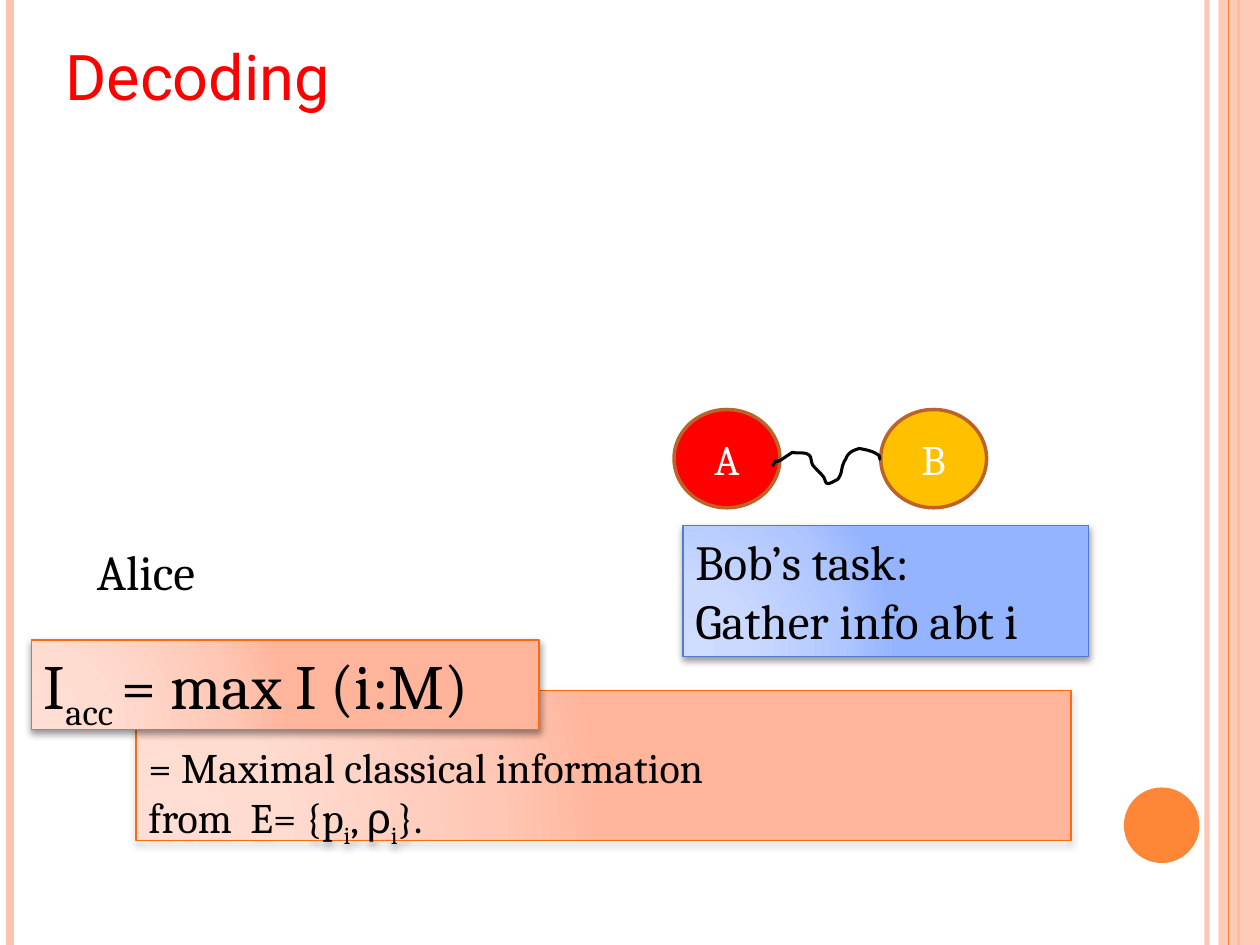
"""Build the Decoding slide: entangled pair A-B, Bob's task and accessible information."""
from pptx import Presentation
from pptx.dml.color import RGBColor
from pptx.enum.shapes import MSO_CONNECTOR, MSO_SHAPE
from pptx.enum.text import MSO_ANCHOR, PP_ALIGN
from pptx.oxml import parse_xml
from pptx.oxml.ns import nsdecls, qn
from pptx.util import Inches, Pt

STRAIGHT = MSO_CONNECTOR.STRAIGHT
RECTANGLE, OVAL = MSO_SHAPE.RECTANGLE, MSO_SHAPE.OVAL
TOP, MIDDLE = MSO_ANCHOR.TOP, MSO_ANCHOR.MIDDLE
LEFT, CENTER = PP_ALIGN.LEFT, PP_ALIGN.CENTER

THEME = {
    "serif": "Cambria", "sans": "Roboto", "greek": "Arial",
    "title": 36, "label": 28, "body": 24,
    "black": "000000", "white": "FFFFFF", "red": "FF0000", "gold": "FFC000",
    "peach": "FEC3AE", "orange": "FE8637", "rim": "BC6329",
    "blue_panel": (("CFDCFF", "CBD9FF", "AFC6FF", "95B4FF"), "4F7CCF"),
    "orange_panel": (("FFDED5", "FFDBD0", "FFC8B6", "FFB59B"), "FF6B0A"),
}
SLIDE_WIDTH, SLIDE_HEIGHT = 10, 7.5
GRADIENT_STOPS = (0, 30, 75, 100)
CURVE_STEPS = 8

RULES = [
    (9.58, "peach", 3, 93),
    (0.08, "peach", 4.5, 100),
    (9.83, "orange", 1.5, 100),
]
INNER_RULE = (9.75, "orange", 0.75, 100)
SIDE_BAND = (9.67, 0, 0.33, SLIDE_HEIGHT)
BADGE = (8.92, 6.25, 0.6, 0.6)

PARTICLES = [("A", 5.35, "red"), ("B", 6.99, "gold")]
PARTICLE_TOP, PARTICLE_WIDTH, PARTICLE_HEIGHT = 3.25, 0.84, 0.78

WAVE_START = (6.13, 3.7)
WAVE_CURVES = [
    ((6.18, 3.62), (6.13, 3.69), (6.2, 3.65)),
    ((6.23, 3.63), (6.29, 3.59), (6.29, 3.59)),
    ((6.32, 3.6), (6.36, 3.59), (6.4, 3.6)),
    ((6.45, 3.62), (6.43, 3.65), (6.45, 3.69)),
    ((6.48, 3.73), (6.51, 3.75), (6.54, 3.79)),
    ((6.56, 3.84), (6.55, 3.86), (6.64, 3.81)),
    ((6.65, 3.81), (6.66, 3.79), (6.67, 3.77)),
    ((6.68, 3.75), (6.68, 3.72), (6.69, 3.69)),
    ((6.7, 3.67), (6.7, 3.66), (6.71, 3.65)),
    ((6.72, 3.63), (6.72, 3.62), (6.74, 3.6)),
    ((6.76, 3.58), (6.79, 3.57), (6.82, 3.56)),
    ((6.87, 3.57), (6.94, 3.58), (6.98, 3.62)),
    ((6.98, 3.63), (6.98, 3.64), (6.99, 3.65)),
]

ALICE = [[("Alice", "")]]
TITLE = [[("Decoding", "")]]
TASK = [[("Bob’s task:", "")], [("Gather info abt i", "")]]
MEANING = [
    [("= Maximal classical information", "")],
    [("from  E= {p", ""), ("i", "sub"), (", ", ""), ("ρ", "greek"),
     ("i", "sub"), ("}.", "")],
]
FORMULA = [[("I", ""), ("acc ", "sub"), ("= max I (i:M)", "")]]


def color(name):
    return RGBColor.from_string(THEME.get(name, name))


def set_alpha(element, percent):
    if percent < 100:
        tone = next(element.iter(qn("a:srgbClr")))
        tone.append(parse_xml(f'<a:alpha {nsdecls("a")} val="{percent * 1000}"/>'))


def add_rule(slide, x, tone, width, alpha):
    rule = slide.shapes.add_connector(
        STRAIGHT, Inches(x), 0, Inches(x), Inches(SLIDE_HEIGHT))
    rule.line.color.rgb = color(tone)
    rule.line.width = Pt(width)
    properties = rule._element.spPr
    set_alpha(properties, alpha)
    properties.append(parse_xml(f'<a:effectLst {nsdecls("a")}/>'))


def add_solid(slide, kind, place, fill, rim=None, rim_width=0):
    shape = slide.shapes.add_shape(kind, *map(Inches, place))
    shape.shadow.inherit = False
    shape.fill.solid()
    shape.fill.fore_color.rgb = color(fill)
    if rim:
        shape.line.color.rgb = color(rim)
        shape.line.width = Pt(rim_width)
    else:
        shape.line.fill.background()
    return shape


def write(shape, lines, size, tone="black", face="serif", align=LEFT,
          anchor=TOP, wrap=True, spacing=None, top=0.05):
    frame = shape.text_frame
    frame.word_wrap = wrap
    frame.vertical_anchor = anchor
    frame.margin_top = Inches(top)
    for index, line in enumerate(lines):
        para = frame.add_paragraph() if index else frame.paragraphs[0]
        para.alignment = align
        if spacing:
            para.line_spacing = spacing
        para.font.name = THEME[face]
        para.font.size = Pt(THEME[size])
        para.font.color.rgb = color(tone)
        for text, style in line:
            span = para.add_run()
            span.text = text
            if style == "sub":
                span.font._element.set("baseline", "-25000")
            elif style == "greek":
                span.font.name = THEME["greek"]


def add_label(slide, place, lines, size, **style):
    box = slide.shapes.add_textbox(*map(Inches, place))
    write(box, lines, size, wrap=False, **style)


def add_panel(slide, place, palette, lines, size, **style):
    tones, rim = THEME[palette]
    panel = add_solid(slide, RECTANGLE, place, tones[-1], rim, 1)
    stops = "".join(
        f'<a:gs pos="{stop * 1000}"><a:srgbClr val="{tone}"/></a:gs>'
        for stop, tone in zip(GRADIENT_STOPS, tones))
    properties = panel._element.spPr
    properties.replace(properties.find(qn("a:solidFill")), parse_xml(
        f'<a:gradFill {nsdecls("a")} rotWithShape="1"><a:gsLst>{stops}</a:gsLst>'
        '<a:path path="circle"><a:fillToRect l="5000" t="100000" r="120000" b="10000"/>'
        '</a:path></a:gradFill>'))
    properties.find(qn("a:effectLst")).append(parse_xml(
        f'<a:outerShdw {nsdecls("a")} blurRad="{Pt(4)}" dist="{Pt(2)}" dir="5400000" '
        'rotWithShape="0"><a:srgbClr val="000000"><a:alpha val="40000"/></a:srgbClr>'
        '</a:outerShdw>'))
    write(panel, lines, size, **style)


def curve_points(start, curves):
    for first, second, end in curves:
        for step in range(1, CURVE_STEPS + 1):
            t = step / CURVE_STEPS
            u = 1 - t
            yield tuple(
                Inches(u**3 * a + 3 * u * u * t * b + 3 * u * t * t * c + t**3 * d)
                for a, b, c, d in zip(start, first, second, end))
        start = end


def add_wave(slide):
    builder = slide.shapes.build_freeform(*map(Inches, WAVE_START))
    builder.add_line_segments(curve_points(WAVE_START, WAVE_CURVES), close=False)
    wave = builder.convert_to_shape()
    wave.shadow.inherit = False
    wave.fill.background()
    wave.line.color.rgb = color("black")
    wave.line.width = Pt(1.75)


def main():
    deck = Presentation()
    deck.slide_width, deck.slide_height = Inches(SLIDE_WIDTH), Inches(SLIDE_HEIGHT)
    slide = deck.slides.add_slide(deck.slide_layouts[6])
    for rule in RULES:
        add_rule(slide, *rule)
    band = add_solid(slide, RECTANGLE, SIDE_BAND, "peach")
    set_alpha(band._element.spPr, 87)
    add_rule(slide, *INNER_RULE)
    add_solid(slide, OVAL, BADGE, "orange")
    for name, left, fill in PARTICLES:
        place = (left, PARTICLE_TOP, PARTICLE_WIDTH, PARTICLE_HEIGHT)
        particle = add_solid(slide, OVAL, place, fill, "rim", 2)
        write(particle, [[(name, "")]], "body", tone="white", align=CENTER, anchor=MIDDLE)
    add_wave(slide)
    add_label(slide, (0.67, 4.25, 1.1, 0.57), ALICE, "label")
    add_panel(slide, (5.42, 4.17, 3.22, 1.04), "blue_panel", TASK, "label")
    add_panel(slide, (1.08, 5.48, 7.42, 1.19), "orange_panel", MEANING, "body",
              spacing=0.9, top=0.45)
    add_label(slide, (0.42, 0.25, 2.3, 0.71), TITLE, "title", tone="red", face="sans")
    add_panel(slide, (0.25, 5.08, 4.03, 0.71), "orange_panel", FORMULA, "title")
    deck.save("out.pptx")


if __name__ == "__main__":
    main()
